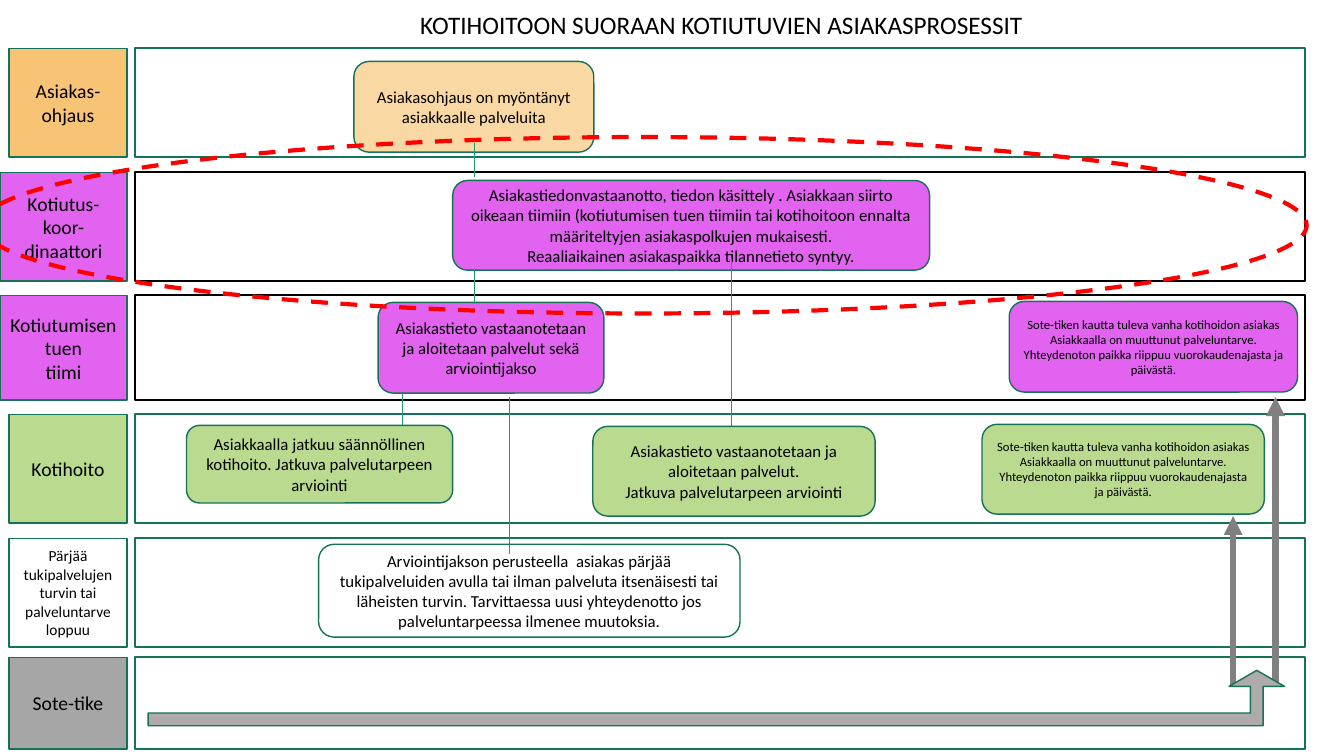
from lxml import etree
from pptx import Presentation
from pptx.dml.color import RGBColor
from pptx.enum.dml import MSO_LINE
from pptx.enum.shapes import MSO_CONNECTOR, MSO_SHAPE
from pptx.enum.text import MSO_ANCHOR, PP_ALIGN
from pptx.oxml.ns import qn
from pptx.util import Inches, Pt

RECT, ROUNDED = MSO_SHAPE.RECTANGLE, MSO_SHAPE.ROUNDED_RECTANGLE
ELLIPSE, BENT_ARROW = MSO_SHAPE.OVAL, MSO_SHAPE.BENT_UP_ARROW
STRAIGHT, DASH = MSO_CONNECTOR.STRAIGHT, MSO_LINE.DASH
CENTER, TOP, MIDDLE = PP_ALIGN.CENTER, MSO_ANCHOR.TOP, MSO_ANCHOR.MIDDLE

COLORS = {
    "black": "000000", "green": "157259", "teal": "1D9A78", "red": "FF0000",
    "orange": "F7C475", "peach": "F9D8A3", "violet": "E263EF", "lime": "B9DA8F",
    "gray": "A6A6A6", "arrow_gray": "808080", "bent_gray": "AFABAB",
}
TITLE = "KOTIHOITOON SUORAAN KOTIUTUVIEN ASIAKASPROSESSIT"
LANE_LEFT, LANE_WIDTH, LABEL_RIGHT = 1.34, 11.6, 1.26

# top, height, lane line, label left, label fill, label size, label paragraphs
LANES = [
    (0.48, 1.08, "green", 0.09, "orange", 14, ["Asiakas-ohjaus"]),
    (1.71, 1.08, "black", 0, "violet", 14, ["Kotiutus-", "koor-", "dinaattori"]),
    (2.93, 1.04, "black", 0, "violet", 14, ["Kotiutumisen tuen", "tiimi"]),
    (4.11, 1.08, "green", 0.09, "lime", 14, ["Kotihoito"]),
    (5.34, 1.08, "green", 0.09, None, 11,
     ["Pärjää tukipalvelujen turvin tai palveluntarve loppuu"]),
    (6.52, 0.91, "green", 0.09, "gray", 14, ["Sote-tike"]),
]
RETURNING_CLIENT = [
    "Sote-tiken kautta tuleva vanha kotihoidon asiakas",
    "Asiakkaalla on muuttunut palveluntarve.",
    "Yhteydenoton paikka riippuu vuorokaudenajasta ja päivästä.",
]
INTAKE_STEPS = [
    ((3.51, 0.61, 2.38, 0.9), "peach", 12,
     ["Asiakasohjaus on myöntänyt asiakkaalle palveluita"]),
    ((4.49, 1.79, 4.73, 0.89), "violet", 12,
     ["Asiakastiedonvastaanotto, tiedon käsittely . Asiakkaan siirto oikeaan "
      "tiimiin (kotiutumisen tuen tiimiin tai kotihoitoon ennalta määriteltyjen "
      "asiakaspolkujen mukaisesti.",
      "Reaaliaikainen asiakaspaikka tilannetieto syntyy."]),
    ((3.75, 3, 2.24, 0.9), "violet", 12,
     ["Asiakastieto vastaanotetaan ja aloitetaan palvelut sekä arviointijakso"]),
]
CARE_STEPS = [
    ((5.88, 4.23, 2.8, 0.89), "lime", 12,
     ["Asiakastieto vastaanotetaan ja aloitetaan palvelut.",
      "Jatkuva palvelutarpeen arviointi"]),
    ((1.85, 4.22, 2.64, 0.77), "lime", 12,
     ["Asiakkaalla jatkuu säännöllinen kotihoito. Jatkuva palvelutarpeen arviointi"]),
    ((3.16, 5.4, 4.18, 0.92), None, 12,
     ["Arviointijakson perusteella  asiakas pärjää tukipalveluiden avulla tai ilman "
      "palveluta itsenäisesti tai läheisten turvin. Tarvittaessa uusi yhteydenotto "
      "jos palveluntarpeessa ilmenee muutoksia."]),
    ((10.01, 2.99, 2.86, 0.9), "violet", 9, RETURNING_CLIENT),
    ((9.74, 4.21, 2.8, 0.89), "lime", 9, RETURNING_CLIENT),
]
# x, start y, end y
LINKS = [(4.7, 1.42, 1.76), (4.7, 2.68, 3.02), (7.25, 2.57, 4.3),
         (3.99, 3.91, 4.22), (5.05, 3.94, 5.5)]
ARROWS = [(12.23, 6.8, 5.12), (12.65, 6.8, 3.94)]


def rgb(name):
    """Return the named colour."""
    return RGBColor.from_string(COLORS[name])


def write(tf, paragraphs, size, anchor=MIDDLE):
    """Write centred paragraphs into a text frame."""
    tf.word_wrap = True
    tf.vertical_anchor = anchor
    for i, text in enumerate(paragraphs):
        p = tf.paragraphs[0] if i == 0 else tf.add_paragraph()
        p.alignment = CENTER
        r = p.add_run()
        r.text = text
        font = {"name": "Calibri", "size": Pt(size), "bold": False}
        for key, value in font.items():
            setattr(r.font, key, value)
        r.font.color.rgb = rgb("black")


def add_box(s, kind, box, fill=None, line="green", width=1):
    """Add a flat preset shape."""
    sp = s.shapes.add_shape(kind, *map(Inches, box))
    sp.shadow.inherit = False
    if fill:
        sp.fill.solid()
        sp.fill.fore_color.rgb = rgb(fill)
    else:
        sp.fill.background()
    sp.line.color.rgb = rgb(line)
    sp.line.width = Pt(width)
    return sp


def add_steps(s, steps):
    """Add rounded process boxes with text."""
    for box, fill, size, paragraphs in steps:
        write(add_box(s, ROUNDED, box, fill).text_frame, paragraphs, size)


def add_vertical(s, x, start, end, color, width, arrow=False):
    """Add a vertical connector, with an arrowhead at its end if asked."""
    line = s.shapes.add_connector(
        STRAIGHT, Inches(x), Inches(start), Inches(x), Inches(end))
    line.line.color.rgb = rgb(color)
    line.line.width = Pt(width)
    if arrow:
        etree.SubElement(line.line._get_or_add_ln(), qn("a:tailEnd"), type="triangle")
    etree.SubElement(line._element.spPr, qn("a:effectLst"))


def add_title(s):
    """Place and format the title placeholder."""
    title = s.shapes.title
    place = {"left": 1.36, "top": 0.04, "width": 11.59, "height": 0.4}
    for key, value in place.items():
        setattr(title, key, Inches(value))
    write(title.text_frame, [TITLE], 18, TOP)


def add_lanes(s):
    """Add the swimlanes and their labels."""
    for top, height, line, left, fill, size, label in LANES:
        add_box(s, RECT, (LANE_LEFT, top, LANE_WIDTH, height), line=line, width=1.5)
        sp = add_box(s, RECT, (left, top, LABEL_RIGHT - left, height), fill)
        write(sp.text_frame, label, size)


def main():
    """Build the slide and save it."""
    prs = Presentation()
    prs.slide_width, prs.slide_height = Inches(13.33), Inches(7.5)
    s = prs.slides.add_slide(prs.slide_layouts[5])
    add_title(s)
    add_lanes(s)
    add_steps(s, INTAKE_STEPS)
    for x, start, end in LINKS:
        add_vertical(s, x, start, end, "teal", 0.5)
    add_steps(s, CARE_STEPS)
    for x, start, end in ARROWS:
        add_vertical(s, x, start, end, "arrow_gray", 4.5, arrow=True)
    bent = add_box(s, BENT_ARROW, (1.47, 6.65, 11.27, 0.55), "bent_gray")
    for i, value in enumerate((0.23, 0.5, 0.29)):
        bent.adjustments[i] = value
    ellipse = add_box(s, ELLIPSE, (-0.19, 1.36, 13.15, 1.75), line="red", width=3)
    ellipse.line.dash_style = DASH
    prs.save("out.pptx")


if __name__ == "__main__":
    main()
